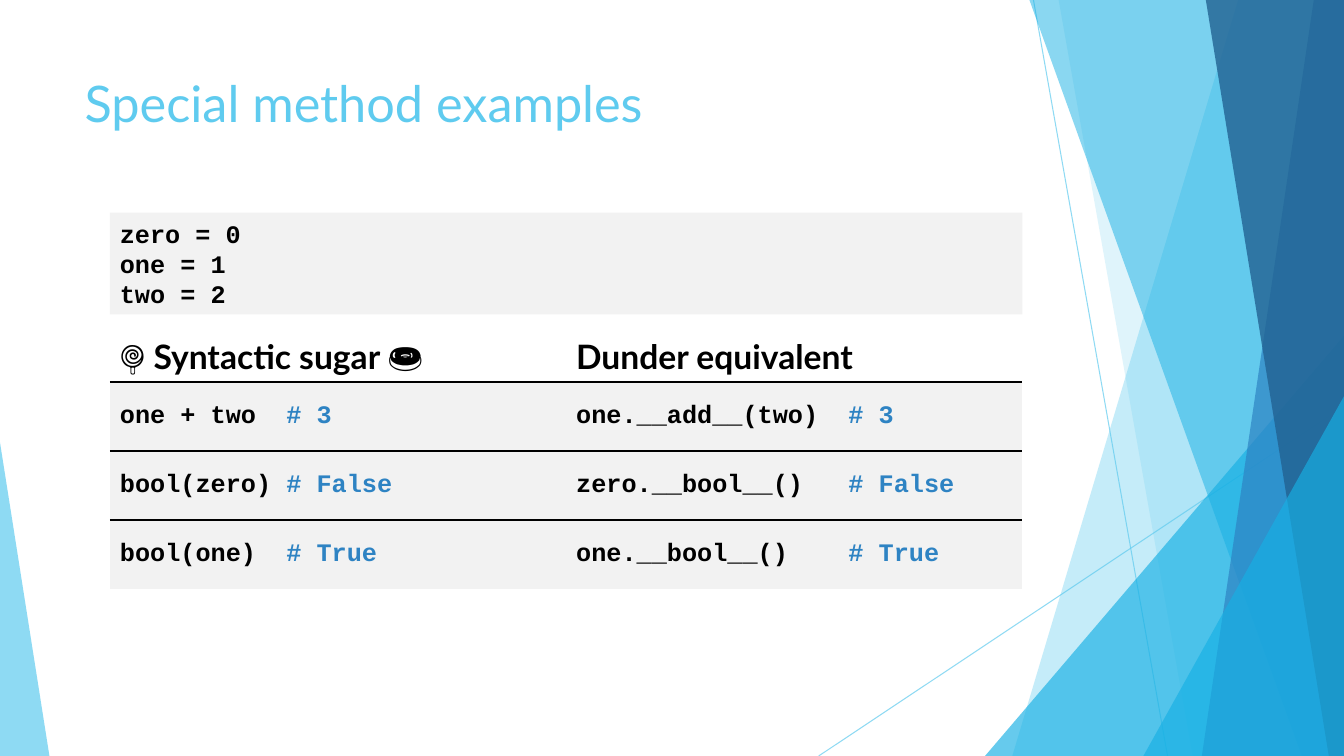
import dataclasses

import lxml.etree
import pptx
import pptx.dml.color
import pptx.enum.shapes
import pptx.enum.text
import pptx.oxml.ns
import pptx.util

Inches = pptx.util.Inches
qn = pptx.oxml.ns.qn


@dataclasses.dataclass(frozen=True)
class Theme:
    sky: str = "5FCBEF"
    cyan: str = "17B0E4"
    blue: str = "2E83C3"
    navy: str = "226292"
    panel: str = "F2F2F2"
    ink: str = "000000"
    heading_font: str = "Lato"
    code_font: str = "Courier New"
    title_size: int = 36
    header_size: int = 24
    code_size: int = 18


THEME = Theme()
WIDTH, HEIGHT = 13.33, 7.5
PANEL_LEFT, PANEL_WIDTH = 1.09, 9.05
NO_GRID_STYLE = "{2D5ABB26-0587-4C30-8999-92F81FD0307C}"

RAYS = [((10.25, 0), (11.58, HEIGHT)), ((WIDTH, 4.03), (8.12, HEIGHT))]
BACK_BANDS = [(12.28, 10.04, THEME.sky, 36), (10.5, 11.83, THEME.sky, 20)]
FRONT_BANDS = [
    (10.21, 12.91, THEME.cyan, 50),
    (13.03, 11.92, THEME.blue, 70),
    (11.96, 13.18, THEME.navy, 80),
]
HEADERS = ["🍭 Syntactic sugar 🍩", "Dunder equivalent"]
EXAMPLES = [
    ("one + two", "one.__add__(two)", "# 3"),
    ("bool(zero)", "zero.__bool__()", "# False"),
    ("bool(one)", "one.__bool__()", "# True"),
]
COMMENT_TABS = [1.65, 2.7]


def rgb(color):
    return pptx.dml.color.RGBColor.from_string(color)


def set_opacity(shape, percent):
    for color in shape.element.spPr.iter(qn("a:srgbClr")):
        lxml.etree.SubElement(color, qn("a:alpha"), val=str(percent * 1000))


def paint(shape, color, opacity=None):
    shape.shadow.inherit = False
    shape.fill.solid()
    shape.fill.fore_color.rgb = rgb(color)
    shape.line.fill.background()
    if opacity is not None:
        set_opacity(shape, opacity)


def add_run(paragraph, text, font, size, color, bold=True):
    run = paragraph.add_run()
    run.text = text
    run.font.name = font
    run.font.size = pptx.util.Pt(size)
    run.font.color.rgb = rgb(color)
    run.font.bold = bold


def add_code(paragraph, text, color=THEME.ink):
    add_run(paragraph, text, THEME.code_font, THEME.code_size, color)


def add_ray(slide, start, end):
    connector = slide.shapes.add_connector(
        pptx.enum.shapes.MSO_CONNECTOR.STRAIGHT,
        *(Inches(value) for value in (*start, *end)))
    connector.line.color.rgb = rgb(THEME.sky)
    connector.line.width = pptx.util.Pt(0.75)
    set_opacity(connector, 70)
    lxml.etree.SubElement(connector.element.spPr, qn("a:effectLst"))


def add_band(slide, top_x, bottom_x, color, opacity):
    builder = slide.shapes.build_freeform(Inches(top_x), Inches(0))
    corners = [(WIDTH, 0), (WIDTH, HEIGHT), (bottom_x, HEIGHT)]
    builder.add_line_segments([(Inches(x), Inches(y)) for x, y in corners])
    paint(builder.convert_to_shape(), color, opacity)


def add_corner(slide, left, top, width, apex, color, opacity):
    triangle = slide.shapes.add_shape(
        pptx.enum.shapes.MSO_SHAPE.ISOSCELES_TRIANGLE,
        Inches(left), Inches(top), Inches(width), Inches(HEIGHT - top))
    triangle.adjustments[0] = apex
    paint(triangle, color, opacity)


def add_backdrop(slide):
    for start, end in RAYS:
        add_ray(slide, start, end)
    for band in BACK_BANDS:
        add_band(slide, *band)
    add_corner(slide, 9.77, 3.33, 3.56, 1, THEME.cyan, 66)
    for band in FRONT_BANDS:
        add_band(slide, *band)
    add_corner(slide, 11.34, 3.93, 1.99, 1, THEME.cyan, 66)
    add_corner(slide, 0, 4.39, 0.49, 0, THEME.sky, 70)


def fill_title(slide, text):
    title = slide.shapes.title
    title.left, title.top = Inches(0.74), Inches(0.67)
    title.width, title.height = Inches(9.4), Inches(1.44)
    title.text_frame.vertical_anchor = pptx.enum.text.MSO_ANCHOR.TOP
    paragraph = title.text_frame.paragraphs[0]
    paragraph.alignment = pptx.enum.text.PP_ALIGN.LEFT
    add_run(paragraph, text, THEME.heading_font, THEME.title_size, THEME.sky, False)


def add_code_panel(slide, lines):
    panel = slide.shapes.add_shape(
        pptx.enum.shapes.MSO_SHAPE.RECTANGLE,
        Inches(PANEL_LEFT), Inches(2.11), Inches(PANEL_WIDTH), Inches(1.01))
    paint(panel, THEME.panel)
    frame = panel.text_frame
    frame.word_wrap = True
    for index, line in enumerate(lines):
        paragraph = frame.add_paragraph() if index else frame.paragraphs[0]
        paragraph.alignment = pptx.enum.text.PP_ALIGN.LEFT
        add_code(paragraph, line)


def add_tab_stop(paragraph, position):
    properties = paragraph._p.get_or_add_pPr()
    stops = lxml.etree.SubElement(properties, qn("a:tabLst"))
    lxml.etree.SubElement(stops, qn("a:tab"), pos=str(Inches(position)), algn="l")


def add_bottom_border(cell):
    border = lxml.etree.Element(qn("a:lnB"), w=str(pptx.util.Pt(1)))
    fill = lxml.etree.SubElement(border, qn("a:solidFill"))
    lxml.etree.SubElement(fill, qn("a:srgbClr"), val=THEME.ink)
    cell._tc.get_or_add_tcPr().insert(0, border)


def fill_example(cell, code, comment, tab):
    cell.margin_top = cell.margin_bottom = Inches(0.2)
    cell.fill.solid()
    cell.fill.fore_color.rgb = rgb(THEME.panel)
    paragraph = cell.text_frame.paragraphs[0]
    add_tab_stop(paragraph, tab)
    add_code(paragraph, code + "\t")
    add_code(paragraph, comment, THEME.blue)


def add_examples_table(slide):
    frame = slide.shapes.add_table(
        len(EXAMPLES) + 1, len(HEADERS), Inches(PANEL_LEFT), Inches(3.29),
        Inches(PANEL_WIDTH), Inches(2.55))
    table = frame.table
    table.first_row = table.horz_banding = False
    for style in frame.element.iter(qn("a:tableStyleId")):
        style.text = NO_GRID_STYLE
    for index, row in enumerate(table.rows):
        row.height = Inches(0.68 if index else 0.5)
    for column, header in enumerate(HEADERS):
        cell = table.cell(0, column)
        cell.fill.background()
        add_run(cell.text_frame.paragraphs[0], header,
                THEME.heading_font, THEME.header_size, THEME.ink)
        for row, example in enumerate(EXAMPLES, start=1):
            fill_example(table.cell(row, column), example[column],
                         example[-1], COMMENT_TABS[column])
        for row in range(len(EXAMPLES)):
            add_bottom_border(table.cell(row, column))


def main():
    presentation = pptx.Presentation()
    presentation.slide_width = Inches(WIDTH)
    presentation.slide_height = Inches(HEIGHT)
    slide = presentation.slides.add_slide(presentation.slide_layouts[5])
    add_backdrop(slide)
    fill_title(slide, "Special method examples")
    add_examples_table(slide)
    add_code_panel(slide, ["zero = 0", "one = 1", "two = 2"])
    presentation.save("out.pptx")


if __name__ == "__main__":
    main()
